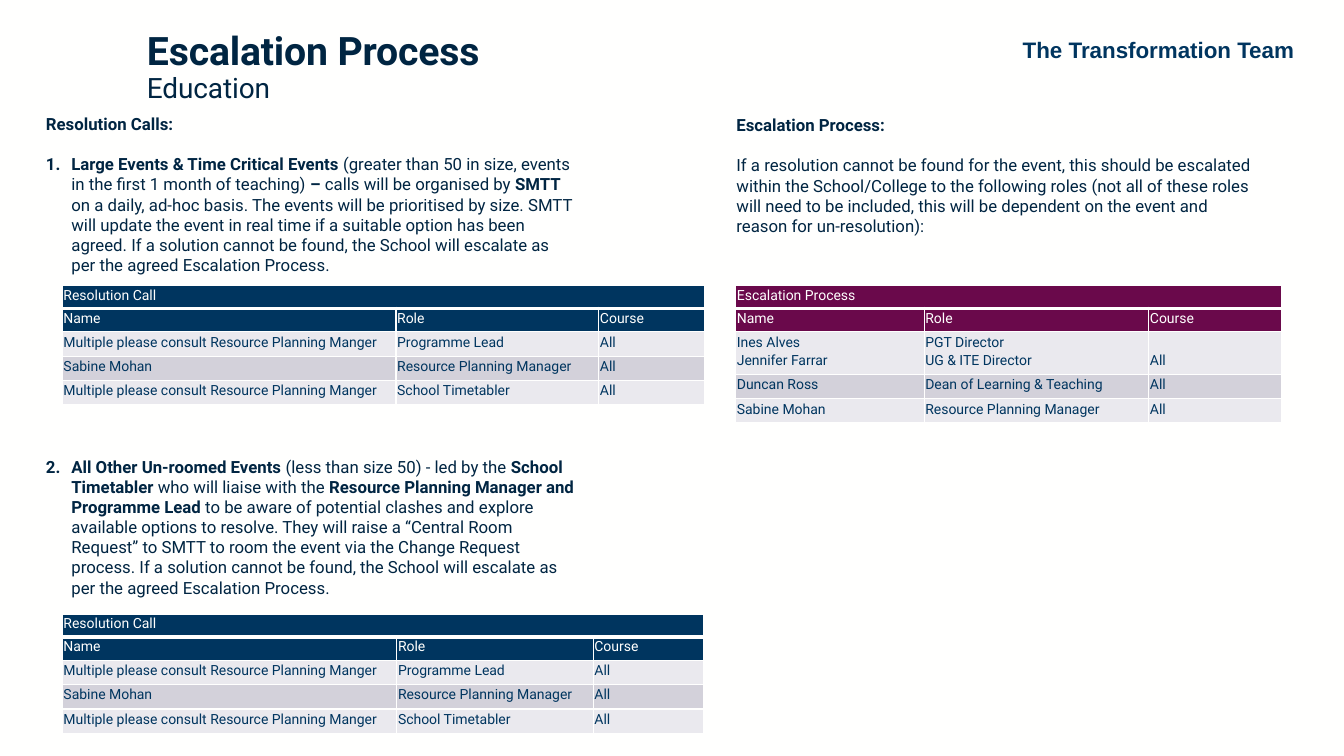
from dataclasses import dataclass

from lxml import etree
from pptx import Presentation
from pptx import util as u
from pptx.dml.color import RGBColor
from pptx.enum import text
from pptx.oxml.ns import qn

# Content: paragraphs are lists of (words, bold)
TEAM = "The Transformation Team"
TITLE, SUBTITLE = "Escalation Process", "Education"

ESCALATION_HEADING = "Escalation Process:"
ESCALATION_TEXT = [[(
    "If a resolution cannot be found for the event, this should be escalated within the "
    "School/College to the following roles (not all of these roles will need to be included, "
    "this will be dependent on the event and reason for un-resolution):", False)]]

CALLS_HEADING = "Resolution Calls:"
CALLS_TEXT = [
    [("Large Events & Time Critical Events ", True),
     ("(greater than 50 in size, events in the first 1 month of teaching) ", False),
     ("– ", True),
     ("calls will be organised by ", False),
     ("SMTT ", True),
     ("on a daily, ad-hoc basis. The events will be prioritised by size. SMTT will update the "
      "event in real time if a suitable option has been agreed. If a solution cannot be found, "
      "the School will escalate as per the agreed Escalation Process.", False)],
    [("All Other Un-roomed Events ", True),
     ("(less than size 50) - led by the ", False),
     ("School Timetabler ", True),
     ("who will liaise with the ", False),
     ("Resource Planning Manager and Programme Lead ", True),
     ("to be aware of potential clashes and explore available options to resolve. They will "
      "raise a “Central Room Request” to SMTT to room the event via the Change Request process. "
      "If a solution cannot be found, the School will escalate as per the agreed Escalation "
      "Process.", False)],
]

HEADER = ("Name", "Role", "Course")
CALL_ROWS = [
    ("Multiple please consult Resource Planning Manger", "Programme Lead", "All"),
    ("Sabine Mohan", "Resource Planning Manager", "All"),
    ("Multiple please consult Resource Planning Manger", "School Timetabler", "All"),
]
ESCALATION_ROWS = [
    ("Ines Alves\nJennifer Farrar", "PGT Director\nUG & ITE Director", "All"),
    ("Duncan Ross", "Dean of Learning & Teaching", "All"),
    ("Sabine Mohan", "Resource Planning Manager", "All"),
]


@dataclass(frozen=True)
class Theme:
    paper: RGBColor = RGBColor.from_string("FFFFFE")
    ink: RGBColor = RGBColor.from_string("002542")
    navy: RGBColor = RGBColor.from_string("00355F")
    plum: RGBColor = RGBColor.from_string("6A094B")
    bands: tuple = (RGBColor.from_string("EAE9EE"), RGBColor.from_string("D3D1DA"))
    font: str = "Roboto"
    team_font: str = "Arial"
    title: int = 28
    subtitle: int = 20
    team: int = 16
    body: int = 12
    table: int = 10


THEME = Theme()
TOP, MIDDLE, BOTTOM = (text.MSO_ANCHOR.TOP, text.MSO_ANCHOR.MIDDLE, text.MSO_ANCHOR.BOTTOM)
BLANK_LINE = 14.4  # points
TABLE_GAP = 9 * BLANK_LINE  # room for the first table between the numbered items

# left, top, column widths, heading, rows, head colour, body anchor
TABLES = [
    (1.57, 7.19, (8.41, 5.11, 2.67), "Resolution Call", CALL_ROWS, THEME.navy, TOP),
    (1.57, 15.47, (8.43, 4.95, 2.79), "Resolution Call", CALL_ROWS, THEME.navy, TOP),
    (18.54, 7.19, (4.75, 5.66, 3.35), "Escalation Process", ESCALATION_ROWS, THEME.plum, MIDDLE),
]


def style(font, size, color, bold=None, name=THEME.font):
    font.size, font.name, font.bold = u.Pt(size), name, bold
    font.color.rgb = color


def add_box(page, *place):
    box = page.shapes.add_textbox(*map(u.Cm, place))
    box.text_frame.word_wrap = True
    return box.text_frame


def add_section(page, place, heading, paragraphs, numbered=False):
    frame = add_box(page, *place)
    para = frame.paragraphs[0]
    para.text = heading
    style(para.font, THEME.body, THEME.ink, True)
    for index, spans in enumerate(paragraphs):
        para = frame.add_paragraph()
        para.space_before = u.Pt(TABLE_GAP if index else BLANK_LINE)
        if numbered:
            props = para._p.get_or_add_pPr()
            props.set("marL", str(u.Cm(0.64)))
            props.set("indent", str(u.Cm(-0.64)))
            etree.SubElement(props, qn("a:buFont"), typeface="+mj-lt")
            etree.SubElement(props, qn("a:buAutoNum"), type="arabicPeriod")
        style(para.font, THEME.body, THEME.ink)
        for words, bold in spans:
            span = para.add_run()
            span.text, span.font.bold = words, bold


def set_borders(cell, bottom=1):
    props = cell._tc.get_or_add_tcPr()
    for index, (side, width) in enumerate(zip("LRTB", (1, 1, 1, bottom))):
        line = etree.Element(qn(f"a:ln{side}"), w=str(u.Pt(width)))
        fill = etree.SubElement(line, qn("a:solidFill"))
        etree.SubElement(fill, qn("a:srgbClr"), val=str(THEME.paper))
        props.insert(index, line)


def fill_cell(cell, words, fill, color, anchor, body):
    cell.fill.solid()
    cell.fill.fore_color.rgb = fill
    cell.margin_left = cell.margin_right = cell.margin_top = u.Cm(0.03)
    cell.margin_bottom = u.Cm(0.13)
    cell.vertical_anchor = anchor
    cell.text = words
    for para in cell.text_frame.paragraphs:
        if body:
            para.line_spacing = 1.07
            para.space_after = u.Pt(0 if "\n" in words else 8)
        style(para.font, THEME.table, color)


def add_role_table(page, left, top, widths, heading, rows, head_color, anchor):
    grid = [(heading, "", ""), HEADER, *rows]
    heights = [0.43, 0.43] + [1.07 if "\n" in row[0] else 0.46 for row in rows]
    place = map(u.Cm, (left, top, sum(widths), sum(heights)))
    table = page.shapes.add_table(len(grid), len(widths), *place).table
    table.first_row = table.horz_banding = False
    for column, width in zip(table.columns, widths):
        column.width = u.Cm(width)
    for r, (row, height) in enumerate(zip(grid, heights)):
        table.rows[r].height = u.Cm(height)
        body = r > 1
        for c, words in enumerate(row):
            cell = table.cell(r, c)
            if body:
                # A single entry beside two-line cells sits on the last line
                level = BOTTOM if "\n" in row[0] and "\n" not in words else anchor
                fill_cell(cell, words, THEME.bands[r % 2], THEME.navy, level, body)
            else:
                fill_cell(cell, words, head_color, THEME.paper, BOTTOM, body)
            set_borders(cell, bottom=1 if r else 3)
    table.cell(0, 0).merge(table.cell(0, len(widths) - 1))


def add_title(page):
    title = page.shapes.title
    title.left, title.top, title.width, title.height = map(u.Cm, (3.45, 0.23, 10.74, 2.97))
    frame = title.text_frame
    frame.auto_size = text.MSO_AUTO_SIZE.NONE
    frame.vertical_anchor = MIDDLE
    para = frame.paragraphs[0]
    para.alignment, para.line_spacing = text.PP_ALIGN.LEFT, 0.9
    for words, size, bold in ((TITLE, THEME.title, True), (SUBTITLE, THEME.subtitle, False)):
        if para.runs:
            para.add_line_break()
        span = para.add_run()
        span.text = words
        style(span.font, size, THEME.ink, bold)
        span._r.get_or_add_rPr().set("spc", "-10")


def main():
    deck = Presentation()
    deck.slide_width, deck.slide_height = u.Cm(33.87), u.Cm(19.05)
    page = deck.slides.add_slide(deck.slide_layouts[5])
    page.background.fill.solid()
    page.background.fill.fore_color.rgb = THEME.paper

    # Heading row
    add_title(page)
    para = add_box(page, 25.27, 0.79, 7.85, 0.94).paragraphs[0]
    para.text, para.alignment = TEAM, text.PP_ALIGN.CENTER
    style(para.font, THEME.team, THEME.navy, True, THEME.team_font)

    # Two columns of text
    add_section(page, (0.91, 2.74, 13.89, 12.57), CALLS_HEADING, CALLS_TEXT, numbered=True)
    add_section(page, (18.31, 2.77, 13.77, 3.84), ESCALATION_HEADING, ESCALATION_TEXT)

    # Role tables
    for table in TABLES:
        add_role_table(page, *table)
    deck.save("out.pptx")


if __name__ == "__main__":
    main()
